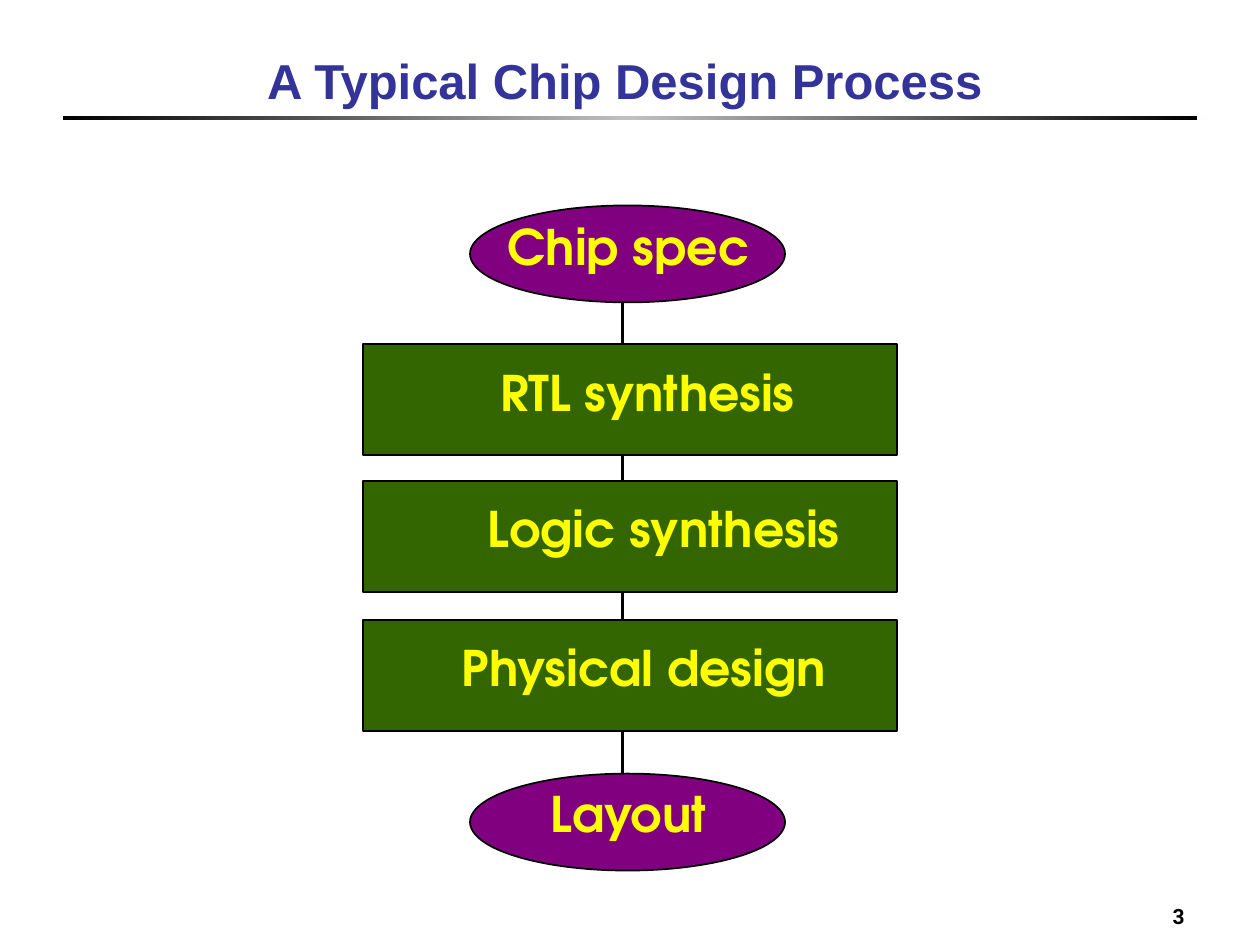
from copy import deepcopy
from dataclasses import dataclass

from lxml import etree
from pptx import Presentation
from pptx.dml.color import RGBColor
from pptx.enum import shapes, text
from pptx.oxml import ns
from pptx.util import Pt


@dataclass(frozen=True)
class Theme:
    title: str = "333399"
    ink: str = "000000"
    glow: str = "C0C0C0"
    dark: str = "1C1C1C"
    pale: str = "FFFFFF"
    oval: str = "800080"
    box: str = "336600"
    label: str = "FFFF00"
    head: str = "Arial"
    body: str = "TeX Gyre Adventor"
    folio: str = "Roboto"
    big: int = 28
    small: int = 12


THEME = Theme()
OVAL = shapes.MSO_SHAPE.OVAL
RECT = shapes.MSO_SHAPE.RECTANGLE
ALIGN = text.PP_ALIGN
ANCHOR = text.MSO_ANCHOR

# name, shape, top of shape, label box relative to the shape, label alignment
STAGES = [
    ("Chip spec", OVAL, 0, (14.4, 2.9, 154, 41), ALIGN.LEFT),
    ("RTL synthesis", RECT, 79.2, (71.3, 7.2, 184.3, 41), ALIGN.LEFT),
    ("Logic synthesis", RECT, 157.6, (64.1, 6.5, 217.4, 41), ALIGN.LEFT),
    ("Physical design", RECT, 236.8, (40.3, 6.5, 240.5, 50.4), ALIGN.CENTER),
    ("Layout", OVAL, 324.7, (38.9, 2.2, 108.7, 50.4), ALIGN.LEFT),
]
# shape: left inset, width, height, fill
FORMS = {
    OVAL: (61.2, 180, 55.4, THEME.oval),
    RECT: (0, 305.3, 63.4, THEME.box),
}


def color(code):
    return RGBColor.from_string(code)


def place(box):
    return [Pt(value) for value in box]


def write(slide, box, words, font, size, code, align, anchor, wrap=True):
    frame = slide.shapes.add_textbox(*place(box)).text_frame
    frame.word_wrap = wrap
    if not wrap:
        frame.auto_size = text.MSO_AUTO_SIZE.SHAPE_TO_FIT_TEXT
    frame.vertical_anchor = anchor
    frame.text = words
    para = frame.paragraphs[0]
    para.alignment = align
    face = para.runs[0].font
    face.name, face.size, face.bold = font, Pt(size), True
    face.color.rgb = color(code)


def add_rule(slide, box, codes):
    """Thin bar with evenly spaced gradient stops from left to right."""
    bar = slide.shapes.add_shape(RECT, *place(box))
    bar.shadow.inherit = False
    bar.line.fill.background()
    bar.fill.gradient()
    bar.fill.gradient_angle = 0
    stops = bar.fill._fill._gradFill.find(ns.qn("a:gsLst"))
    while len(stops) < len(codes):
        stops.append(deepcopy(stops[0]))
    for i, (stop, code) in enumerate(zip(bar.fill.gradient_stops, codes)):
        stop.position = i / (len(codes) - 1)
        stop.color.rgb = color(code)


def add_header(slide, box):
    left, top, width, height = box
    base = top + height
    add_rule(slide, (left + 6.2, base, 648, 2.2), (THEME.dark, THEME.pale))
    add_rule(slide, (left - 6, base, 648, 2.2),
             (THEME.ink, THEME.glow, THEME.ink))
    write(slide, box, "A Typical Chip Design Process", THEME.head, THEME.big,
          THEME.title, ALIGN.CENTER, ANCHOR.BOTTOM)


def add_link(slide, x, start, end):
    link = slide.shapes.add_connector(
        shapes.MSO_CONNECTOR.STRAIGHT, *place((x, start, x, end)))
    link.line.color.rgb = color(THEME.ink)
    link.line.width = Pt(1.5)
    line = link.line._get_or_add_ln()
    etree.SubElement(line, ns.qn("a:tailEnd"), type="triangle")
    etree.SubElement(link._element.spPr, ns.qn("a:effectLst"))


def add_stage(slide, left, top, stage):
    name, form, drop, label, align = stage
    inset, width, height, fill = FORMS[form]
    x, y = left + inset, top + drop
    shape = slide.shapes.add_shape(form, *place((x, y, width, height)))
    shape.shadow.inherit = False
    shape.fill.solid()
    shape.fill.fore_color.rgb = color(fill)
    shape.line.color.rgb = color(THEME.ink)
    shape.line.width = Pt(1)
    dx, dy, wide, high = label
    write(slide, (x + dx, y + dy, wide, high), name, THEME.body, THEME.big,
          THEME.label, align, ANCHOR.TOP, wrap=False)


def add_flow(slide, box):
    """Links go first, so that the stages cover their ends."""
    left, top = box[:2]
    for upper, lower in zip(STAGES, STAGES[1:]):
        foot = top + upper[2] + FORMS[upper[1]][2]
        add_link(slide, left + 148.3, foot - 20, top + lower[2] + 6)
    for stage in STAGES:
        add_stage(slide, left, top, stage)


def add_folio(slide, box):
    write(slide, box, "3", THEME.folio, THEME.small, THEME.ink,
          ALIGN.RIGHT, ANCHOR.BOTTOM)


def main():
    deck = Presentation()
    deck.slide_width, deck.slide_height = Pt(720), Pt(540)
    slide = deck.slides.add_slide(deck.slide_layouts[6])
    add_header(slide, (42, 12.2, 630, 54))
    add_folio(slide, (534, 498, 150, 36))
    add_flow(slide, (207.4, 117.4, 305.3, 380.1))
    deck.save("out.pptx")


if __name__ == "__main__":
    main()
